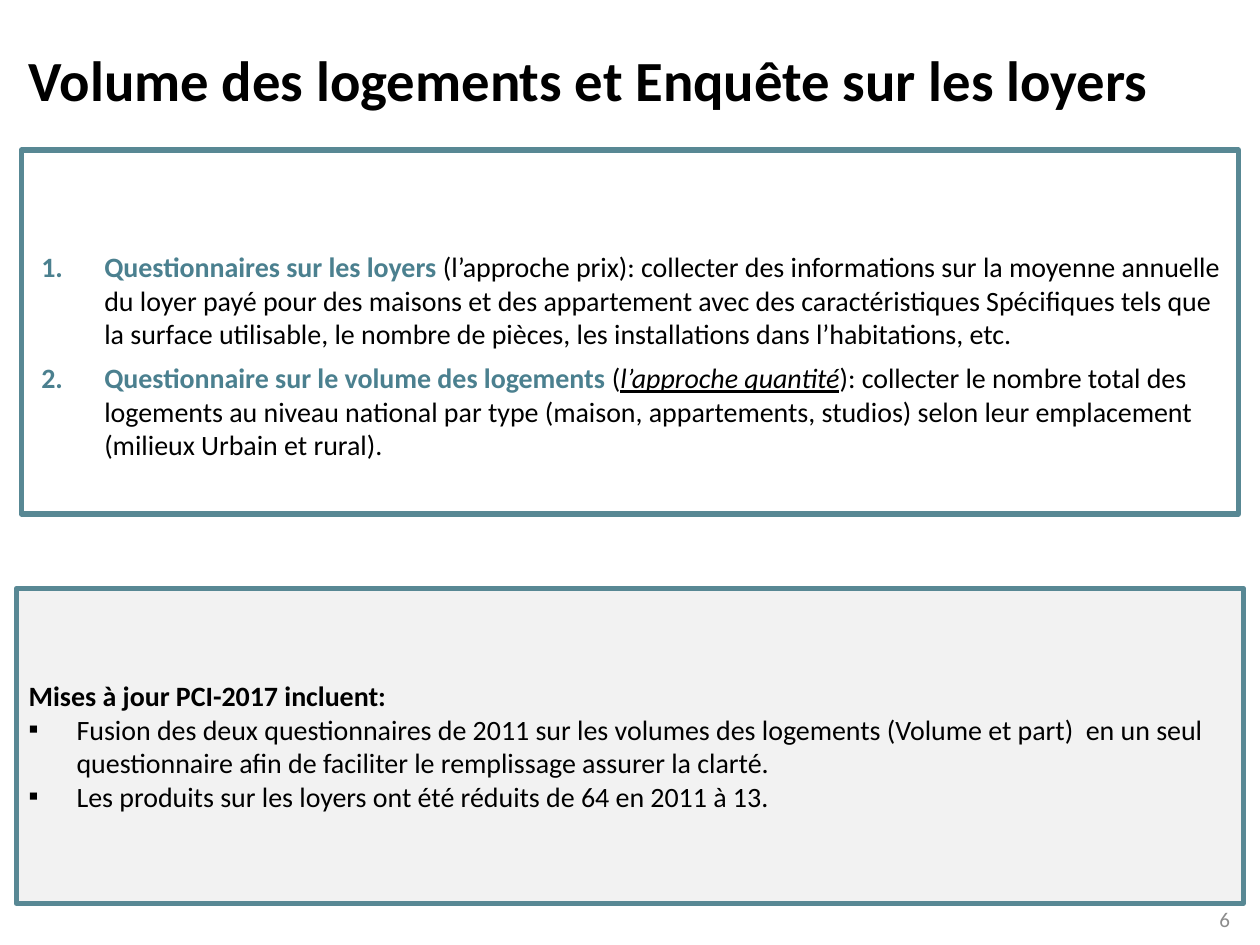
from lxml import etree
from pptx import Presentation
from pptx.dml.color import RGBColor
from pptx.enum.shapes import MSO_SHAPE
from pptx.enum.text import MSO_ANCHOR, PP_ALIGN
from pptx.oxml.ns import qn
from pptx.util import Inches, Pt

TEAL, BLACK = "4B808F", "000000"


def style(r, size, color=BLACK, bold=False):
    r.font.name = "Calibri"
    r.font.size = Pt(size)
    r.font.bold = bold
    r.font.color.rgb = RGBColor.from_string(color)


def set_bullet(p, tag, margin, indent, **attributes):
    """Add a hanging bullet: tag is buAutoNum or buChar."""
    pPr = p._p.get_or_add_pPr()
    pPr.set("marL", str(Inches(margin)))
    pPr.set("indent", str(Inches(indent)))
    if tag == "buChar":
        etree.SubElement(pPr, qn("a:buFont")).set("typeface", "Calibri")
    bullet = etree.SubElement(pPr, qn("a:" + tag))
    for key, value in attributes.items():
        bullet.set(key, value)


prs = Presentation()
prs.slide_width, prs.slide_height = Inches(10), Inches(7.5)
s = prs.slides.add_slide(prs.slide_layouts[5])

# Title
title = s.shapes.title
title.left, title.top = Inches(0.13), Inches(0.24)
title.width, title.height = Inches(9.6), Inches(0.77)
tf = title.text_frame
tf.text = "Volume des logements et Enquête sur les loyers"
tf.vertical_anchor = MSO_ANCHOR.MIDDLE
tf.paragraphs[0].alignment = PP_ALIGN.LEFT
style(tf.paragraphs[0].runs[0], 32.4, bold=True)

# Framed boxes
frames = []
for left, top, width, height, fill in [
    (0.17, 1.19, 9.66, 2.89, "FFFFFF"),
    (0.13, 4.67, 9.74, 2.5, "F2F2F2"),
]:
    sp = s.shapes.add_shape(MSO_SHAPE.RECTANGLE, Inches(left), Inches(top),
                            Inches(width), Inches(height))
    sp.shadow.inherit = False
    sp.fill.solid()
    sp.fill.fore_color.rgb = RGBColor.from_string(fill)
    sp.line.color.rgb = RGBColor.from_string("588894")
    sp.line.width = Pt(3)
    sp.text_frame.word_wrap = True
    frames.append(sp.text_frame)
questionnaires, updates = frames

# Numbered questionnaires: heading, then (text, emphasised) parts
items = [
    ("Questionnaires sur les loyers ", [
        ("(l’approche prix): collecter des informations sur la moyenne annuelle "
         "du loyer payé pour des maisons et des appartement avec des "
         "caractéristiques Spécifiques tels que la surface utilisable, le nombre "
         "de pièces, les installations dans l’habitations, etc.", False)]),
    ("Questionnaire sur le volume des logements ", [
        ("(", False),
        ("l’approche quantité", True),
        ("): collecter le nombre total des logements au niveau national par type "
         "(maison, appartements, studios) selon leur emplacement "
         "(milieux Urbain et rural).", False)]),
]
questionnaires.vertical_anchor = MSO_ANCHOR.TOP
questionnaires.margin_top = Inches(0.79)
for i, (heading, parts) in enumerate(items):
    p = questionnaires.add_paragraph() if i else questionnaires.paragraphs[0]
    p.alignment = PP_ALIGN.LEFT
    p.space_after = Pt(6)
    set_bullet(p, "buAutoNum", 0.56, -0.5, type="arabicPeriod")
    r = p.add_run()
    r.text = heading
    style(r, 16, TEAL, bold=True)
    for text, emphasised in parts:
        r = p.add_run()
        r.text = text
        style(r, 16)
        if emphasised:
            r.font.italic = r.font.underline = True

# Updates: bold lead line, then square bullets
lines = [
    "Mises à jour PCI-2017 incluent:",
    "Fusion des deux questionnaires de 2011 sur les volumes des logements "
    "(Volume et part)  en un seul questionnaire afin de faciliter le "
    "remplissage assurer la clarté.",
    "Les produits sur les loyers ont été réduits de 64 en 2011 à 13.",
]
updates.vertical_anchor = MSO_ANCHOR.MIDDLE
for i, line in enumerate(lines):
    p = updates.add_paragraph() if i else updates.paragraphs[0]
    p.text = line
    p.alignment = PP_ALIGN.LEFT
    if i:
        set_bullet(p, "buChar", 0.38, -0.38, char="▪")
    style(p.runs[0], 16, bold=i == 0)

# Page number
number = s.shapes.add_textbox(Inches(7.53), Inches(7.17), Inches(2.33), Inches(0.25))
tf = number.text_frame
tf.word_wrap = True
tf.vertical_anchor = MSO_ANCHOR.MIDDLE
tf.text = "6"
tf.paragraphs[0].alignment = PP_ALIGN.RIGHT
style(tf.paragraphs[0].runs[0], 12, "8C8C8C")

prs.save("out.pptx")
